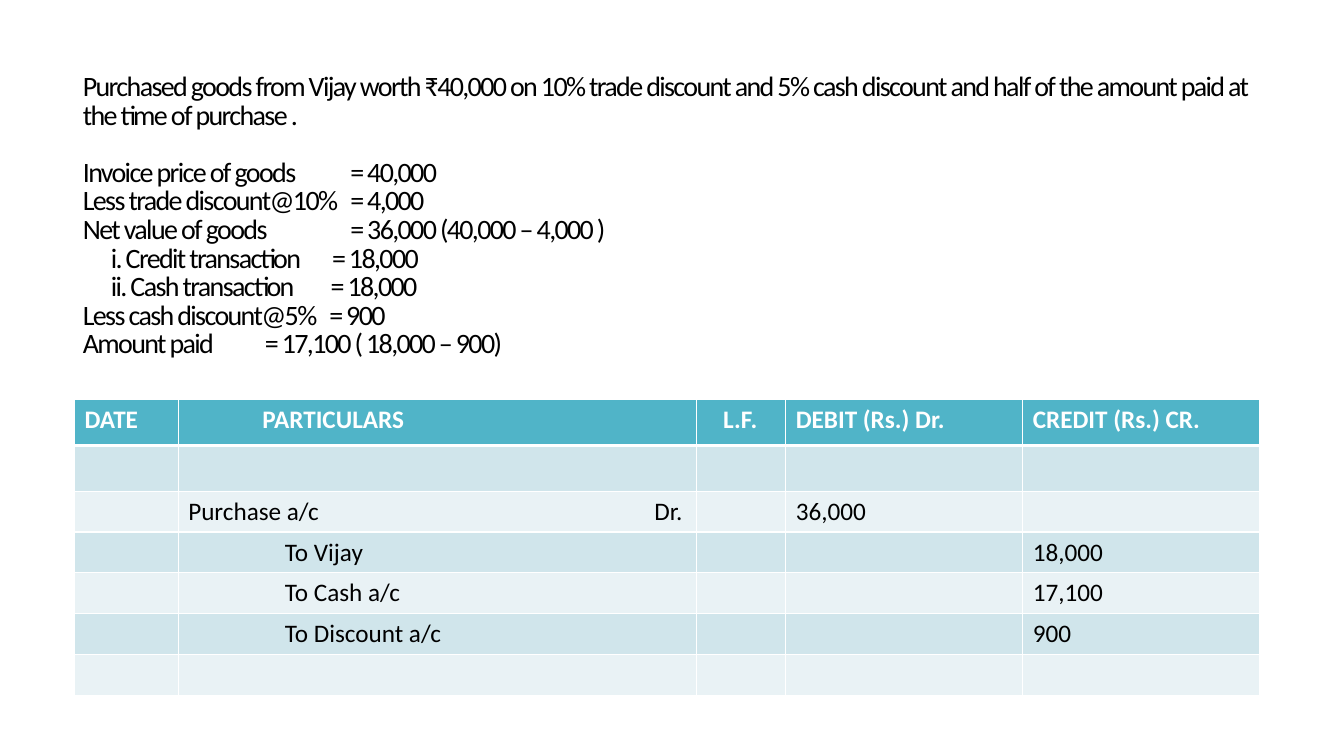
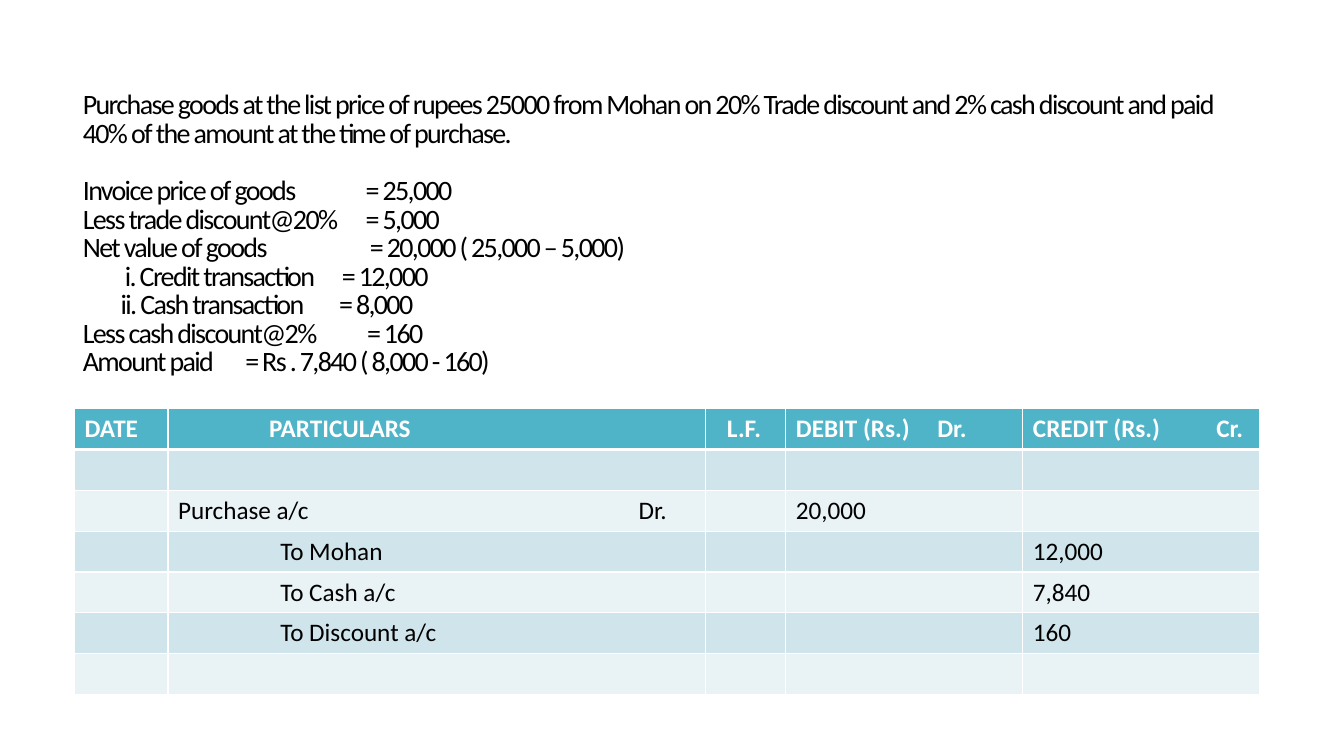
from lxml.etree import SubElement
from pptx import Presentation
from pptx.dml.color import RGBColor
from pptx.enum.text import MSO_ANCHOR, MSO_AUTO_SIZE, PP_ALIGN
from pptx.oxml.ns import qn
from pptx.util import Pt

# Shared look
FONT = "Calibri"
BLACK, WHITE = "000000", "FFFFFF"
HEADER_FILL = "50B4C8"
BAND_FILLS = ["E9F2F5", "D0E5EB"]
CONTENT_LEFT, WORKING_TOP, WORKING_WIDTH = 52, 39.6, 848
LEDGER_LEFT, LEDGER_WIDTH = 53.3, 846.7


def write(paragraph, text, size=18, color=BLACK, bold=False, tracking=0,
          line_spacing=None, before=0, indent=0, tabs=()):
    paragraph.alignment = PP_ALIGN.LEFT
    paragraph.space_before = Pt(before)
    if line_spacing:
        paragraph.line_spacing = line_spacing
    properties = paragraph._p.get_or_add_pPr()
    if indent:
        properties.set("marL", str(Pt(indent)))
        properties.set("indent", "0")
    if tabs:
        stops = SubElement(properties, qn("a:tabLst"))
        for position in tabs:
            SubElement(stops, qn("a:tab"), pos=str(Pt(position)), algn="l")
    run = paragraph.add_run()
    run.text = text
    run.font.name, run.font.size, run.font.bold = FONT, Pt(size), bold
    run.font.color.rgb = RGBColor.from_string(color)
    if tracking:
        run.font._element.set("spc", str(round(tracking * 100)))


def draw_borders(cell, top, bottom):
    properties = cell._tc.get_or_add_tcPr()
    for side, width in (("L", 1), ("R", 1), ("T", top), ("B", bottom)):
        line = SubElement(properties, qn(f"a:ln{side}"), w=str(Pt(width)))
        SubElement(SubElement(line, qn("a:solidFill")), qn("a:srgbClr"), val=WHITE)


# Working lines: text, tab stops. Ledger cells: text, indent, tab stops.
exercises = [
    {
        "question": "Purchased goods from Vijay worth ₹40,000 on 10% trade discount and "
                    "5% cash discount and half of the amount paid at the time of purchase .",
        "working": [
            ("Invoice price of goods\t= 40,000", [191]),
            ("Less trade discount@10%\t= 4,000", [191]),
            ("Net value of goods\t= 36,000 (40,000 – 4,000 )", [191]),
            ("\ti. Credit transaction\t= 18,000", [20, 178]),
            ("\tii. Cash transaction\t= 18,000", [20, 177]),
            ("Less cash discount@5%\t= 900", [176]),
            ("Amount paid\t= 17,100 ( 18,000 – 900)", [130]),
        ],
        "working_height": 230.4,
        "ledger_top": 285.3,
        "columns": [74, 370, 64, 169.3, 169.3],
        "rows": [33, 32.5] + [29.2] * 5,
        "header": [("DATE", 0, []), ("PARTICULARS", 53, []), ("L.F.", 12, []),
                   ("DEBIT (Rs.) Dr.", 0, []), ("CREDIT (Rs.) CR.", 0, [])],
        "purchase": "36,000",
        "purchase_tab": 333,
        "credit_indent": 69,
        "credits": [("To Vijay", "18,000"), ("To Cash a/c", "17,100"),
                    ("To Discount a/c", "900")],
    },
    {
        "question": "Purchase goods at the list price of rupees 25000 from Mohan on 20% Trade "
                    "discount and 2% cash discount and paid 40% of the amount at the time of "
                    "purchase.",
        "working": [
            ("Invoice price of goods\t= 25,000", [202]),
            ("Less trade discount@20%\t= 5,000", [202]),
            ("Net value of goods\t= 20,000 ( 25,000 – 5,000)", [205]),
            ("\ti. Credit transaction\t= 12,000", [30, 185]),
            ("\tii. Cash transaction\t= 8,000", [27, 183]),
            ("Less cash discount@2%\t= 160", [203]),
            ("Amount paid\t= Rs . 7,840 ( 8,000 - 160)", [116]),
        ],
        "working_height": 256.3,
        "ledger_top": 291.8,
        "columns": [66.7, 384, 57.4, 169.3, 169.3],
        "rows": [29.1] * 7,
        "header": [("DATE", 0, []), ("PARTICULARS", 65, []), ("L.F.", 8, []),
                   ("DEBIT (Rs.)\tDr.", 0, [101]), ("CREDIT (Rs.)\tCr.", 0, [131])],
        "purchase": "20,000",
        "purchase_tab": 329,
        "credit_indent": 73,
        "credits": [("To Mohan", "12,000"), ("To Cash a/c", "7,840"),
                    ("To Discount a/c", "160")],
    },
]

deck = Presentation()
deck.slide_width, deck.slide_height = Pt(960), Pt(540)

for exercise in exercises:
    slide = deck.slides.add_slide(deck.slide_layouts[5])

    # Question and working
    working = slide.shapes.title
    working.left, working.top = Pt(CONTENT_LEFT), Pt(WORKING_TOP)
    working.width, working.height = Pt(WORKING_WIDTH), Pt(exercise["working_height"])
    frame = working.text_frame
    frame.word_wrap = True
    frame.auto_size = MSO_AUTO_SIZE.NONE
    frame.vertical_anchor = MSO_ANCHOR.MIDDLE
    for number, (text, tabs) in enumerate([(exercise["question"], [])] + exercise["working"]):
        paragraph = frame.add_paragraph() if number else frame.paragraphs[0]
        write(paragraph, text, size=20, tracking=-1.2, line_spacing=0.85,
              before=20.4 if number == 1 else 0, tabs=tabs)

    # Journal entry
    blank = ("", 0, [])
    entries = [
        exercise["header"],
        [blank] * 5,
        [blank, ("Purchase a/c\tDr.", 0, [exercise["purchase_tab"]]), blank,
         (exercise["purchase"], 0, []), blank],
    ]
    for account, amount in exercise["credits"]:
        entries.append([blank, (account, exercise["credit_indent"], []), blank, blank,
                        (amount, 0, [])])
    entries.append([blank] * 5)

    ledger = slide.shapes.add_table(
        len(entries), 5, Pt(LEDGER_LEFT), Pt(exercise["ledger_top"]),
        Pt(LEDGER_WIDTH), Pt(sum(exercise["rows"]))).table
    ledger.horz_banding = False
    for column, width in zip(ledger.columns, exercise["columns"]):
        column.width = Pt(width)
    for row, height in zip(ledger.rows, exercise["rows"]):
        row.height = Pt(height)

    for row_number, entry in enumerate(entries):
        is_header = row_number == 0
        fill = HEADER_FILL if is_header else BAND_FILLS[row_number % 2]
        for column_number, (text, indent, tabs) in enumerate(entry):
            cell = ledger.cell(row_number, column_number)
            draw_borders(cell, top=3 if row_number == 1 else 1, bottom=3 if is_header else 1)
            cell.fill.solid()
            cell.fill.fore_color.rgb = RGBColor.from_string(fill)
            if text:
                write(cell.text_frame.paragraphs[0], text, bold=is_header, indent=indent,
                      color=WHITE if is_header else BLACK, tabs=tabs)

deck.save("out.pptx")
